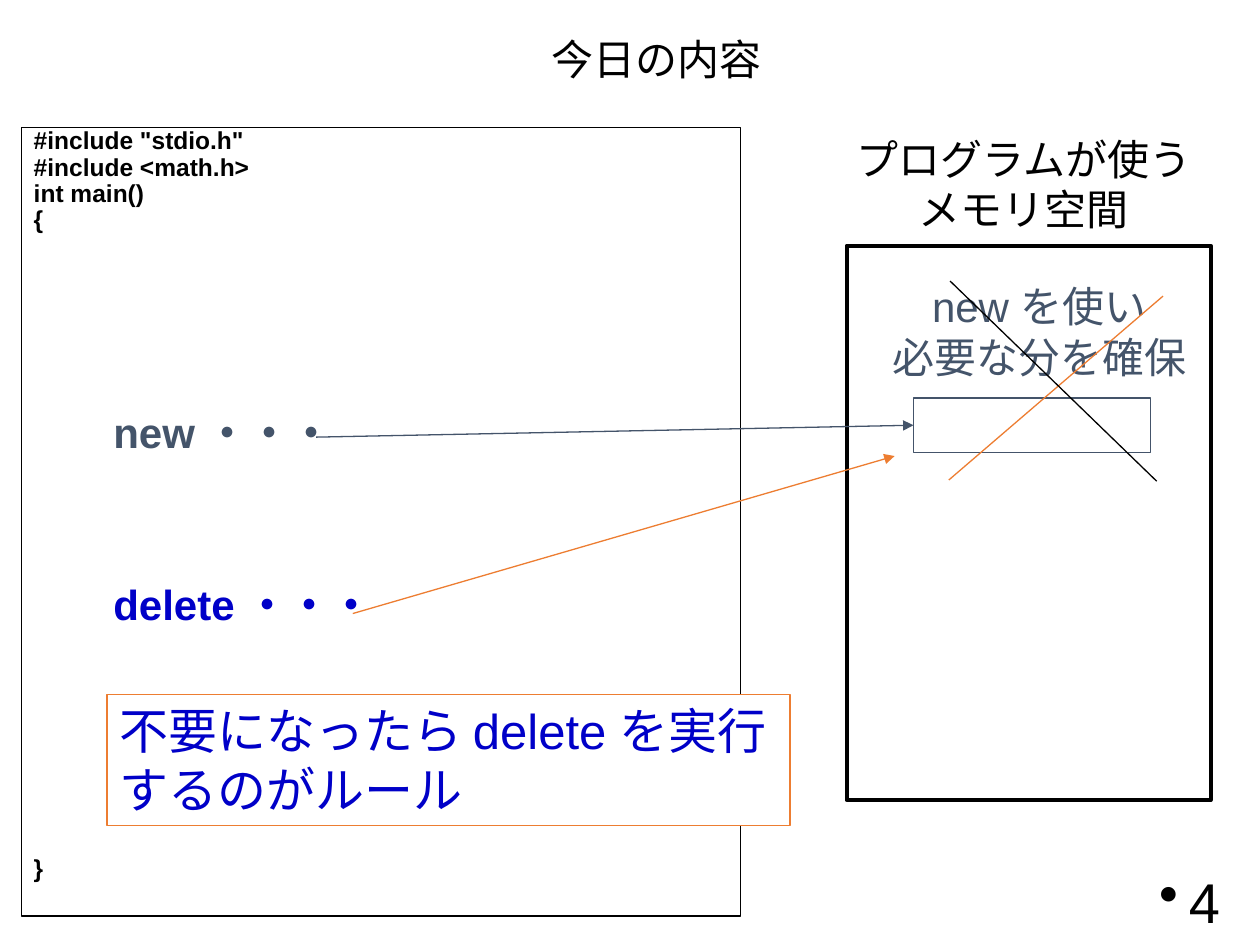
from dataclasses import dataclass

from lxml.etree import SubElement
from pptx import Presentation
from pptx.dml.color import RGBColor
from pptx.enum.shapes import MSO_CONNECTOR, MSO_SHAPE
from pptx.enum.text import MSO_ANCHOR, PP_ALIGN
from pptx.oxml.ns import qn
from pptx.util import Pt


@dataclass(frozen=True)
class Theme:
    font: str = "Arial"
    black: str = "000000"
    white: str = "FFFFFF"
    slate: str = "44546A"
    orange: str = "ED7D31"
    blue: str = "0000C8"
    code: int = 14
    body: int = 24
    note: int = 28
    page: int = 32
    thin: float = 0.75
    thick: float = 2.25


class Deck:
    def __init__(self, theme):
        self.theme = theme
        self.file = Presentation()
        self.file.slide_width = Pt(720)
        self.file.slide_height = Pt(540)
        self.slide = self.file.slides.add_slide(self.file.slide_layouts[6])

    def apply(self, item, values):
        for name, value in values.items():
            setattr(item, name, value)

    def row(self, frame, words, size, color, first, bold=False, indent=0,
            bullet=None, **form):
        para = frame.paragraphs[0] if first else frame.add_paragraph()
        props = para._p.get_or_add_pPr()
        if indent:
            props.set("marL", str(Pt(indent)))
        if bullet:
            SubElement(props, qn("a:buChar")).set("char", bullet)
        self.apply(para, {"alignment": PP_ALIGN.LEFT, **form})
        run = para.add_run()
        run.text = words
        self.apply(run.font, {"name": self.theme.font, "size": Pt(size),
                              "bold": bold})
        run.font.color.rgb = RGBColor.from_string(color)

    def fill(self, shape, rows, size, color, wrap=False,
             anchor=MSO_ANCHOR.TOP, **form):
        frame = shape.text_frame
        self.apply(frame, {"word_wrap": wrap, "vertical_anchor": anchor})
        for spot, words in enumerate(rows):
            self.row(frame, words, size, color, spot == 0, **form)

    def text(self, area, rows, size, color, **form):
        box = self.slide.shapes.add_textbox(*map(Pt, area))
        self.fill(box, rows, size, color, **form)

    def rect(self, area, color, width, back=None):
        shape = self.slide.shapes.add_shape(MSO_SHAPE.RECTANGLE, *map(Pt, area))
        shape.shadow.inherit = False
        if back:
            shape.fill.solid()
            shape.fill.fore_color.rgb = RGBColor.from_string(back)
        else:
            shape.fill.background()
        shape.line.color.rgb = RGBColor.from_string(color)
        shape.line.width = Pt(width)
        return shape

    def code(self, shape, rows):
        frame = shape.text_frame
        self.apply(frame, {"word_wrap": True, "vertical_anchor": MSO_ANCHOR.TOP})
        for spot, (words, size, color, gap, indent) in enumerate(rows):
            self.row(frame, words, size, color, spot == 0, bold=True,
                     indent=indent, line_spacing=0.7, space_before=Pt(gap))

    def line(self, start, end, color, arrow=False, goal=None):
        link = self.slide.shapes.add_connector(
            MSO_CONNECTOR.STRAIGHT, *map(Pt, start + end))
        if goal:
            link.end_connect(goal, 1)
        link.line.color.rgb = RGBColor.from_string(color)
        link.line.width = Pt(self.theme.thin)
        props = link._element.spPr
        if arrow:
            tail = SubElement(props.find(qn("a:ln")), qn("a:tailEnd"))
            tail.set("type", "triangle")
        SubElement(props, qn("a:effectLst"))


def main():
    look = Theme()
    deck = Deck(look)
    mid = PP_ALIGN.CENTER

    deck.text((542.2, 500.4, 162, 28.8), ["4"], look.page, look.black, wrap=True,
              anchor=MSO_ANCHOR.MIDDLE, alignment=PP_ALIGN.RIGHT, bullet="•")
    deck.text((308.2, 15.8, 134.6, 36), ["今日の内容"], look.body, look.black)

    code = deck.rect((12.2, 72.7, 411.1, 450.7), look.black, look.thin)
    plain = look.code, look.black
    deck.code(code, [
        ('#include "stdio.h"', *plain, 0, 0),
        ("#include <math.h>", *plain, 3.2, 0),
        ("int main()", *plain, 3.2, 0),
        ("{", *plain, 3.2, 0),
        ("new ・・・", look.body, look.slate, 107.5, 45.5),
        ("delete ・・・", look.body, look.blue, 78, 45.5),
        ("}", *plain, 133.5, 0),
    ])

    deck.rect((483.8, 140.4, 208.1, 316.8), look.black, look.thick)
    deck.text((481, 72.7, 208.1, 65.5), ["プログラムが使う", "メモリ空間"],
              look.body, look.black, alignment=mid)
    cell = deck.rect((522, 227.5, 135.4, 31), look.slate, look.thin)
    deck.text((501.8, 157, 184.3, 65.5), ["new を使い", "必要な分を確保"],
              look.body, look.slate, alignment=mid)
    deck.line((180.7, 249.8), (522, 243), look.slate, arrow=True, goal=cell)

    note = deck.rect((61.2, 396.7, 390.2, 74.9), look.orange, look.thin, look.white)
    deck.fill(note, ["不要になったら delete を実行", "するのがルール"],
              look.note, look.blue)
    deck.line((201.6, 350.6), (511.2, 260.6), look.orange, arrow=True)
    deck.line((664.6, 169.2), (542.2, 274.3), look.orange)
    deck.line((542.9, 160.6), (661, 275), look.black)

    deck.file.save("out.pptx")


if __name__ == "__main__":
    main()
